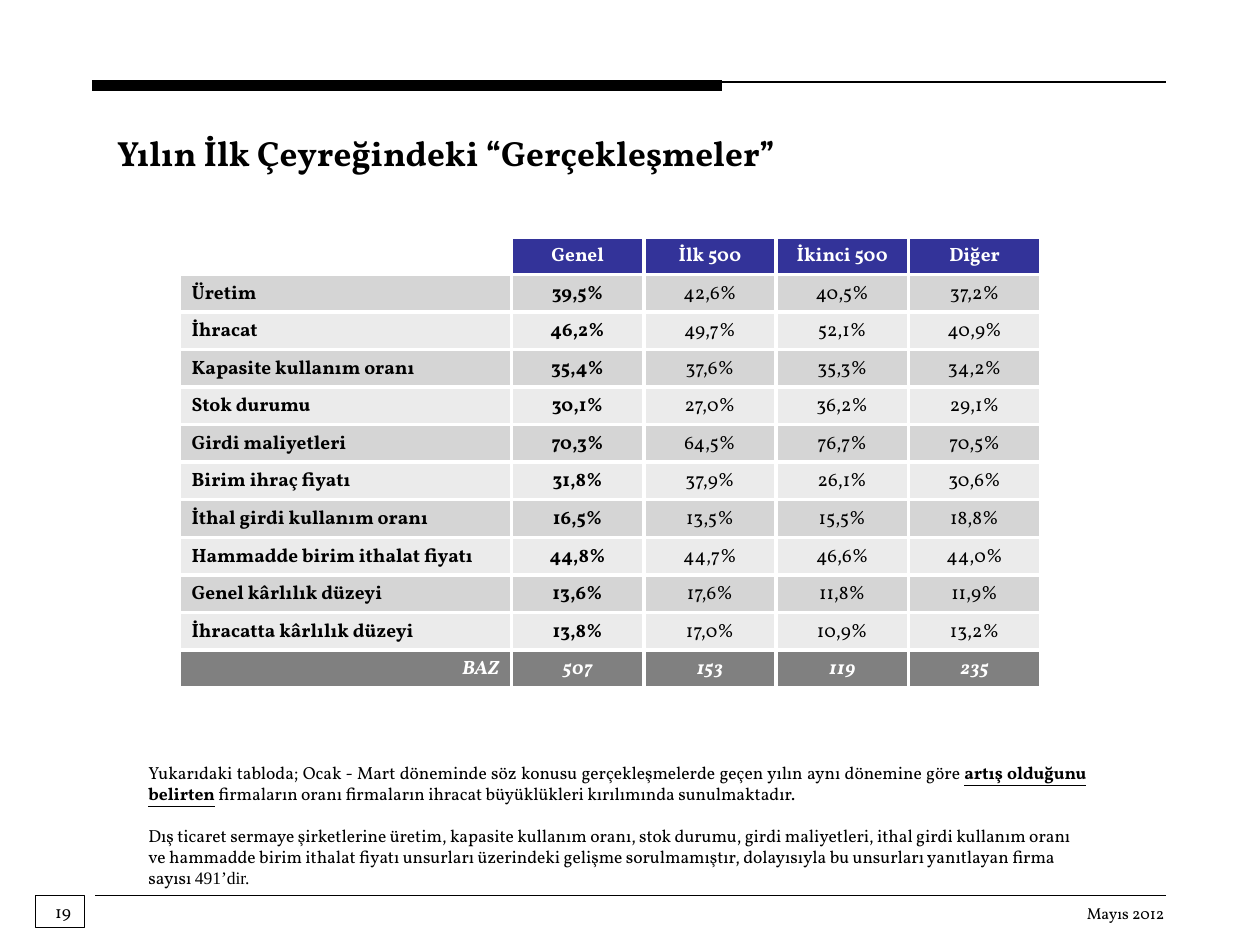
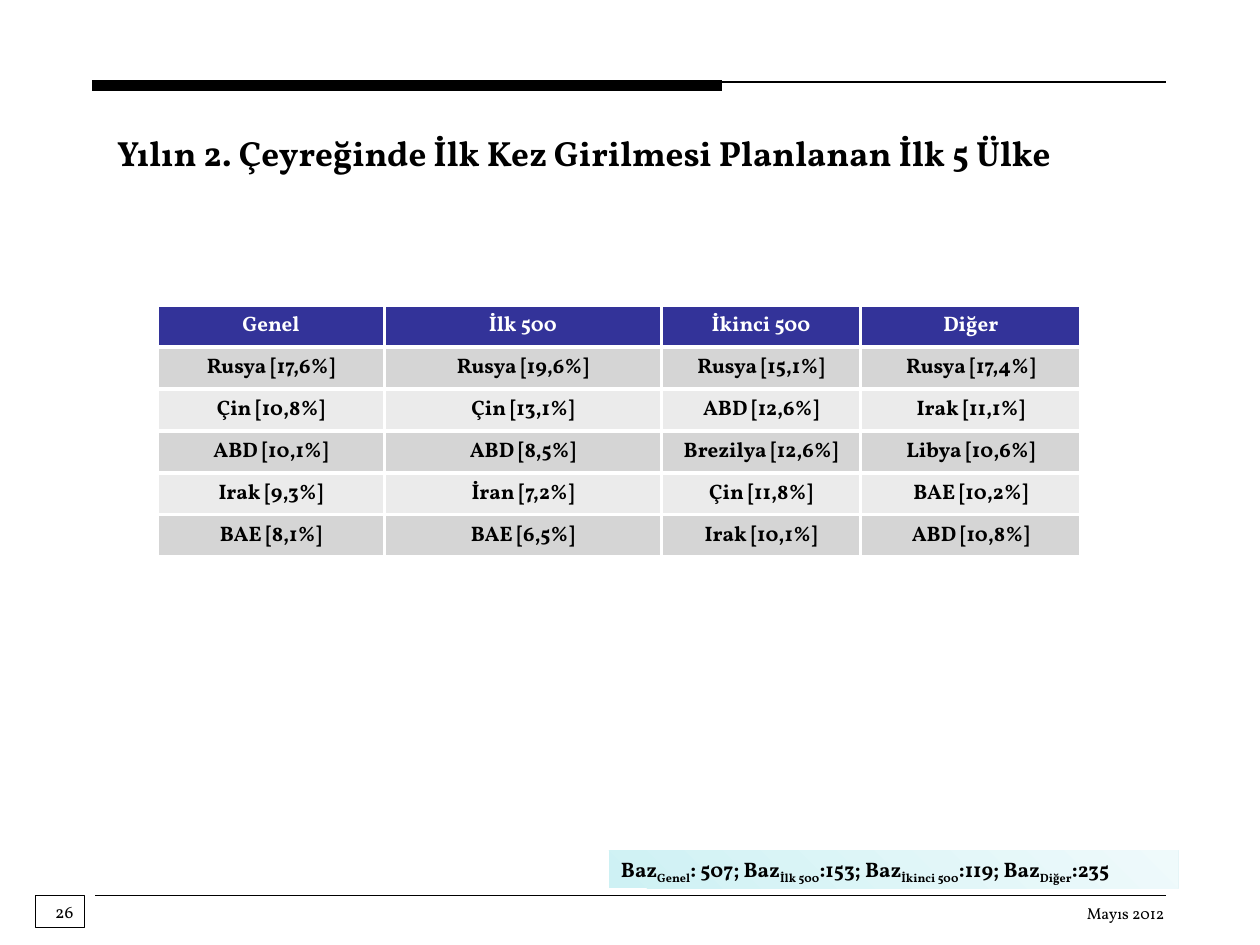
"""Build two slides of survey tables on a shared ruled frame."""
import pptx
import pptx.util
import pptx.dml.color
import pptx.enum.shapes
import pptx.enum.text
import pptx.oxml.ns
from lxml import etree

WIDE, HIGH = 10, 7.5
FACE = "Vollkorn"
BLACK, WHITE, BLUE, GREY = "000000", "FFFFFF", "333399", "808080"
BANDS = ["D5D5D5", "EBEBEB"]
DATE = "Mayıs 2012"
GROUPS = ["Genel", "İlk 500", "İkinci 500", "Diğer"]

RULES = [
    (0.75, 9.25, 7.11, 0.75),
    (0.73, 5.73, 0.68, 6),
    (0.75, 9.25, 0.65, 0.75),
]

RATES = {
    "title": "Yılın İlk Çeyreğindeki “Gerçekleşmeler”",
    "page": "19",
    "box": (1.42, 1.88, 3.58),
    "cols": [2.64, 1.05, 1.05, 1.05, 1.05],
    "size": 11,
    "bold": 2,
    "labels": True,
    "rows": [
        ["", *GROUPS],
        ["Üretim", "39,5%", "42,6%", "40,5%", "37,2%"],
        ["İhracat", "46,2%", "49,7%", "52,1%", "40,9%"],
        ["Kapasite kullanım oranı", "35,4%", "37,6%", "35,3%", "34,2%"],
        ["Stok durumu", "30,1%", "27,0%", "36,2%", "29,1%"],
        ["Girdi maliyetleri", "70,3%", "64,5%", "76,7%", "70,5%"],
        ["Birim ihraç fiyatı", "31,8%", "37,9%", "26,1%", "30,6%"],
        ["İthal girdi kullanım oranı", "16,5%", "13,5%", "15,5%", "18,8%"],
        ["Hammadde birim ithalat fiyatı", "44,8%", "44,7%", "46,6%", "44,0%"],
        ["Genel kârlılık düzeyi", "13,6%", "17,6%", "11,8%", "11,9%"],
        ["İhracatta kârlılık düzeyi", "13,8%", "17,0%", "10,9%", "13,2%"],
        ["BAZ", "507", "153", "119", "235"],
    ],
}

LANDS = {
    "title": "Yılın 2. Çeyreğinde İlk Kez Girilmesi Planlanan İlk 5 Ülke",
    "page": "26",
    "box": (1.25, 2.42, 2),
    "cols": [1.8, 2.2, 1.58, 1.75],
    "size": 12,
    "bold": 4,
    "labels": False,
    "rows": [
        GROUPS,
        ["Rusya [17,6%]", "Rusya [19,6%]", "Rusya [15,1%]", "Rusya [17,4%]"],
        ["Çin [10,8%]", "Çin [13,1%]", "ABD [12,6%]", "Irak [11,1%]"],
        ["ABD [10,1%]", "ABD [8,5%]", "Brezilya [12,6%]", "Libya [10,6%]"],
        ["Irak [9,3%]", "İran [7,2%]", "Çin [11,8%]", "BAE [10,2%]"],
        ["BAE [8,1%]", "BAE [6,5%]", "Irak [10,1%]", "ABD [10,8%]"],
    ],
}

NOTES = [
    [("Yukarıdaki tabloda; Ocak - Mart döneminde söz konusu gerçekleşmelerde "
      "geçen yılın aynı dönemine göre ", {}),
     ("artış olduğunu belirten", {"bold": True, "underline": True}),
     (" firmaların oranı firmaların ihracat büyüklükleri kırılımında "
      "sunulmaktadır.", {})],
    [("Dış ticaret sermaye şirketlerine üretim, kapasite kullanım oranı, stok "
      "durumu, girdi maliyetleri, ithal girdi kullanım oranı", {})],
    [("ve hammadde birim ithalat fiyatı unsurları üzerindeki gelişme "
      "sorulmamıştır, dolayısıyla bu unsurları yanıtlayan firma", {})],
    [("sayısı ", {}), ("491’dir.", {"name": "Times New Roman"})],
]
BASES = [("Baz", "Genel"), (": 507; Baz", "İlk 500"),
         (":153; Baz", "İkinci 500"), (":119; Baz", "Diğer"), (":235", "")]

ALIGN = pptx.enum.text.PP_ALIGN
ANCHOR = pptx.enum.text.MSO_ANCHOR
INCH = pptx.util.Inches
qn = pptx.oxml.ns.qn


def hue(code):
    return pptx.dml.color.RGBColor.from_string(code)


def style(run, size, color=BLACK, name=FACE, **flags):
    font = run.font
    font.size = pptx.util.Pt(size)
    font.name = name
    font.color.rgb = hue(color)
    for flag, value in flags.items():
        setattr(font, flag, value)


def put(para, text, size, align=ALIGN.LEFT, **look):
    para.text = text
    para.alignment = align
    for run in para.runs:
        style(run, size, **look)


def add_box(slide, *place, wrap=True):
    frame = slide.shapes.add_textbox(*map(INCH, place)).text_frame
    frame.word_wrap = wrap
    return frame


def add_rule(slide, left, right, top, width):
    line = slide.shapes.add_connector(
        pptx.enum.shapes.MSO_CONNECTOR.STRAIGHT,
        *map(INCH, (right, top, left, top)))
    line.line.color.rgb = hue(BLACK)
    line.line.width = pptx.util.Pt(width)
    etree.SubElement(line._element.spPr, qn("a:effectLst"))


def add_rect(slide, *place):
    rect = slide.shapes.add_shape(
        pptx.enum.shapes.MSO_SHAPE.RECTANGLE, *map(INCH, place))
    rect.shadow.inherit = False
    return rect


def add_frame(deck, data):
    slide = deck.slides.add_slide(deck.slide_layouts[5])
    for rule in RULES:
        add_rule(slide, *rule)
    rect = add_rect(slide, 0.28, 7.11, 0.39, 0.25)
    rect.fill.background()
    rect.line.color.rgb = hue(BLACK)
    rect.line.width = pptx.util.Pt(0.75)
    date = add_box(slide, 8.51, 7.12, 0.83, 0.25, wrap=False)
    put(date.paragraphs[0], DATE, 9, ALIGN.RIGHT)
    page = add_box(slide, 0.34, 7.1, 2.5, 0.4)
    put(page.paragraphs[0], data["page"], 10)
    title = slide.shapes.title
    title.left, title.top, title.width, title.height = map(
        INCH, (0.83, 0.99, 8.82, 0.44))
    title.text_frame.vertical_anchor = ANCHOR.TOP
    put(title.text_frame.paragraphs[0], data["title"], 20, bold=True)
    return slide


def edge(cell):
    props = cell._tc.get_or_add_tcPr()
    for side in ("lnL", "lnR", "lnT", "lnB"):
        line = etree.SubElement(props, qn("a:" + side), w="28575")
        fill = etree.SubElement(line, qn("a:solidFill"))
        etree.SubElement(fill, qn("a:srgbClr"), val=WHITE)


def fill_cell(cell, text, row, col, data):
    head = row == 0
    foot = data["labels"] and row == len(data["rows"]) - 1
    label = data["labels"] and col == 0
    back = BLUE if head else GREY if foot else BANDS[(row - 1) % 2]
    align = ALIGN.CENTER
    if label:
        align = ALIGN.RIGHT if foot else ALIGN.LEFT
    edge(cell)
    cell.fill.solid()
    cell.fill.fore_color.rgb = hue(back if text else WHITE)
    cell.vertical_anchor = ANCHOR.BOTTOM
    para = cell.text_frame.paragraphs[0]
    put(para, text, data["size"], align,
        color=WHITE if head or foot else BLACK,
        bold=head or foot or col < data["bold"], italic=foot)
    if not text:
        etree.SubElement(para._p, qn("a:endParaRPr"), sz=str(data["size"] * 100))


def add_grid(slide, data):
    left, top, high = data["box"]
    rows, cols = data["rows"], data["cols"]
    table = slide.shapes.add_table(
        len(rows), len(cols),
        *map(INCH, (left, top, sum(cols), high))).table
    table.first_row = table.horz_banding = False
    for col, width in zip(table.columns, cols):
        col.width = INCH(width)
    for row, line in enumerate(rows):
        table.rows[row].height = INCH(high / len(rows))
        for col, text in enumerate(line):
            fill_cell(table.cell(row, col), text, row, col, data)


def add_notes(slide):
    frame = add_box(slide, 1.08, 6, 7.64, 1.1)
    for num, parts in enumerate(NOTES):
        para = frame.add_paragraph() if num else frame.paragraphs[0]
        para.alignment = ALIGN.JUSTIFY
        if num == 1:
            para.space_before = pptx.util.Pt(12)
        for text, look in parts:
            run = para.add_run()
            run.text = text
            style(run, 10, **look)


def add_bases(slide):
    rect = add_rect(slide, 4.83, 6.75, 4.52, 0.3)
    rect.line.fill.background()
    rect.fill.gradient()
    rect.fill.gradient_angle = 45
    for stop, code in zip(rect.fill.gradient_stops, ("CEF1F4", "EFFAFB")):
        stop.color.rgb = hue(code)
    rect.text_frame.word_wrap = True
    rect.text_frame.vertical_anchor = ANCHOR.TOP
    para = rect.text_frame.paragraphs[0]
    para.alignment = ALIGN.LEFT
    for text, sub in BASES:
        for part, base in ((text, "0"), (sub, "-25000")):
            if part:
                run = para.add_run()
                run.text = part
                style(run, 12, bold=True)
                run.font._element.set("baseline", base)


def main():
    deck = pptx.Presentation()
    deck.slide_width, deck.slide_height = INCH(WIDE), INCH(HIGH)
    for data, extra in ((RATES, add_notes), (LANDS, add_bases)):
        slide = add_frame(deck, data)
        add_grid(slide, data)
        extra(slide)
    deck.save("out.pptx")


if __name__ == "__main__":
    main()
